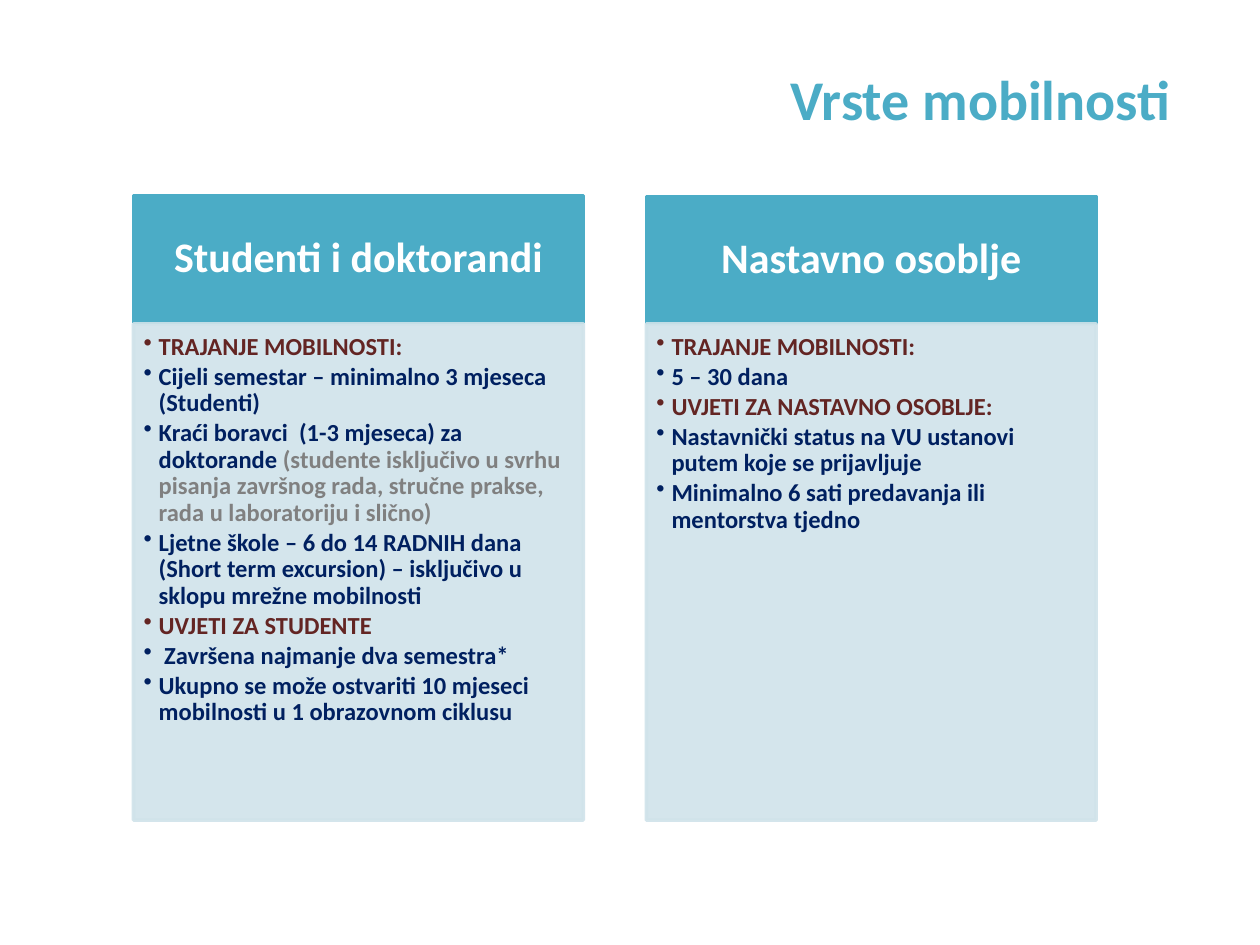
from lxml.etree import SubElement
from pptx import Presentation
from pptx.dml.color import RGBColor
from pptx.enum.shapes import MSO_SHAPE as Shape
from pptx.enum.text import MSO_ANCHOR as Anchor, PP_ALIGN as Align
from pptx.oxml.ns import qn
from pptx.util import Inches, Pt

TEAL, PALE, WHITE = "4BACC6", "D0E3EA", "FFFFFF"
MAROON, NAVY, GREY = "632523", "002060", "808080"
COLUMN_WIDTH, HEADER_HEIGHT, BODY_HEIGHT, BODY_TOP = 3.57, 1.01, 3.94, 2.57

# Each column: left, header top, heading, paragraphs made of (text, colour) runs
COLUMNS = [
    (1.06, 1.55, "Studenti i doktorandi", [
        [("TRAJANJE MOBILNOSTI:", MAROON)],
        [("Cijeli semestar – minimalno 3 mjeseca (Studenti)", NAVY)],
        [("Kraći boravci  (1-3 mjeseca) za doktorande ", NAVY),
         ("(studente isključivo u svrhu pisanja završnog rada, stručne prakse, "
          "rada u laboratoriju i slično)", GREY)],
        [("Ljetne škole – 6 do 14 RADNIH dana (Short term excursion) – "
          "isključivo u sklopu mrežne mobilnosti", NAVY)],
        [("UVJETI ZA STUDENTE", MAROON)],
        [(" Završena najmanje dva semestra*", NAVY)],
        [("Ukupno se može ostvariti 10 mjeseci mobilnosti u 1 obrazovnom ciklusu", NAVY)],
    ]),
    (5.13, 1.56, "Nastavno osoblje", [
        [("TRAJANJE MOBILNOSTI:", MAROON)],
        [("5 – 30 dana", NAVY)],
        [("UVJETI ZA NASTAVNO OSOBLJE:", MAROON)],
        [("Nastavnički status na VU ustanovi putem koje se prijavljuje", NAVY)],
        [("Minimalno 6 sati predavanja ili mentorstva tjedno", NAVY)],
    ]),
]


def write(shape, paragraphs, size, align=Align.LEFT, anchor=Anchor.TOP,
          insets=(0.1, 0.05, 0.1, 0.05), line_spacing=1.0, space_after=0, bullets=False):
    """Fill a shape with bold paragraphs, each a list of (text, colour) runs."""
    frame = shape.text_frame
    frame.word_wrap = True
    frame.vertical_anchor = anchor
    (frame.margin_left, frame.margin_top,
     frame.margin_right, frame.margin_bottom) = map(Inches, insets)
    for index, runs in enumerate(paragraphs):
        paragraph = frame.add_paragraph() if index else frame.paragraphs[0]
        paragraph.alignment = align
        paragraph.line_spacing = line_spacing
        paragraph.space_after = Pt(space_after)
        if bullets:
            properties = paragraph._p.get_or_add_pPr()
            properties.set("marL", str(Inches(0.12)))
            properties.set("indent", str(Inches(-0.12)))
            SubElement(properties, qn("a:buChar"), char="•")
        for text, color in runs:
            run = paragraph.add_run()
            run.text = text
            run.font.name = "Calibri"
            run.font.size = Pt(size)
            run.font.bold = True
            run.font.color.rgb = RGBColor.from_string(color)


def add_panel(left, top, height, color, opacity=100):
    panel = slide.shapes.add_shape(Shape.RECTANGLE, Inches(left), Inches(top),
                                   Inches(COLUMN_WIDTH), Inches(height))
    panel.shadow.inherit = False
    panel.line.width = Pt(2)
    for fill in (panel.fill, panel.line.fill):
        fill.solid()
        fill.fore_color.rgb = RGBColor.from_string(color)
    if opacity < 100:
        for color_element in panel._element.spPr.iter(qn("a:srgbClr")):
            SubElement(color_element, qn("a:alpha"), val=str(opacity * 1000))
    return panel


presentation = Presentation()
presentation.slide_width, presentation.slide_height = Inches(10), Inches(7.5)
slide = presentation.slides.add_slide(presentation.slide_layouts[6])

title = slide.shapes.add_textbox(Inches(0.5), Inches(0.45), Inches(8.89), Inches(0.66))
write(title, [[("Vrste mobilnosti", TEAL)]], size=32, align=Align.RIGHT, anchor=Anchor.MIDDLE)

for left, header_top, heading, paragraphs in COLUMNS:
    header = add_panel(left, header_top, HEADER_HEIGHT, TEAL)
    write(header, [[(heading, WHITE)]], size=24, align=Align.CENTER, anchor=Anchor.MIDDLE,
          insets=(0.19, 0.11, 0.19, 0.11), line_spacing=0.9)
    body = add_panel(left, BODY_TOP, BODY_HEIGHT, PALE, opacity=90)
    write(body, paragraphs, size=14, insets=(0.08, 0.08, 0.11, 0.12),
          line_spacing=0.9, space_after=2, bullets=True)

presentation.save("out.pptx")
